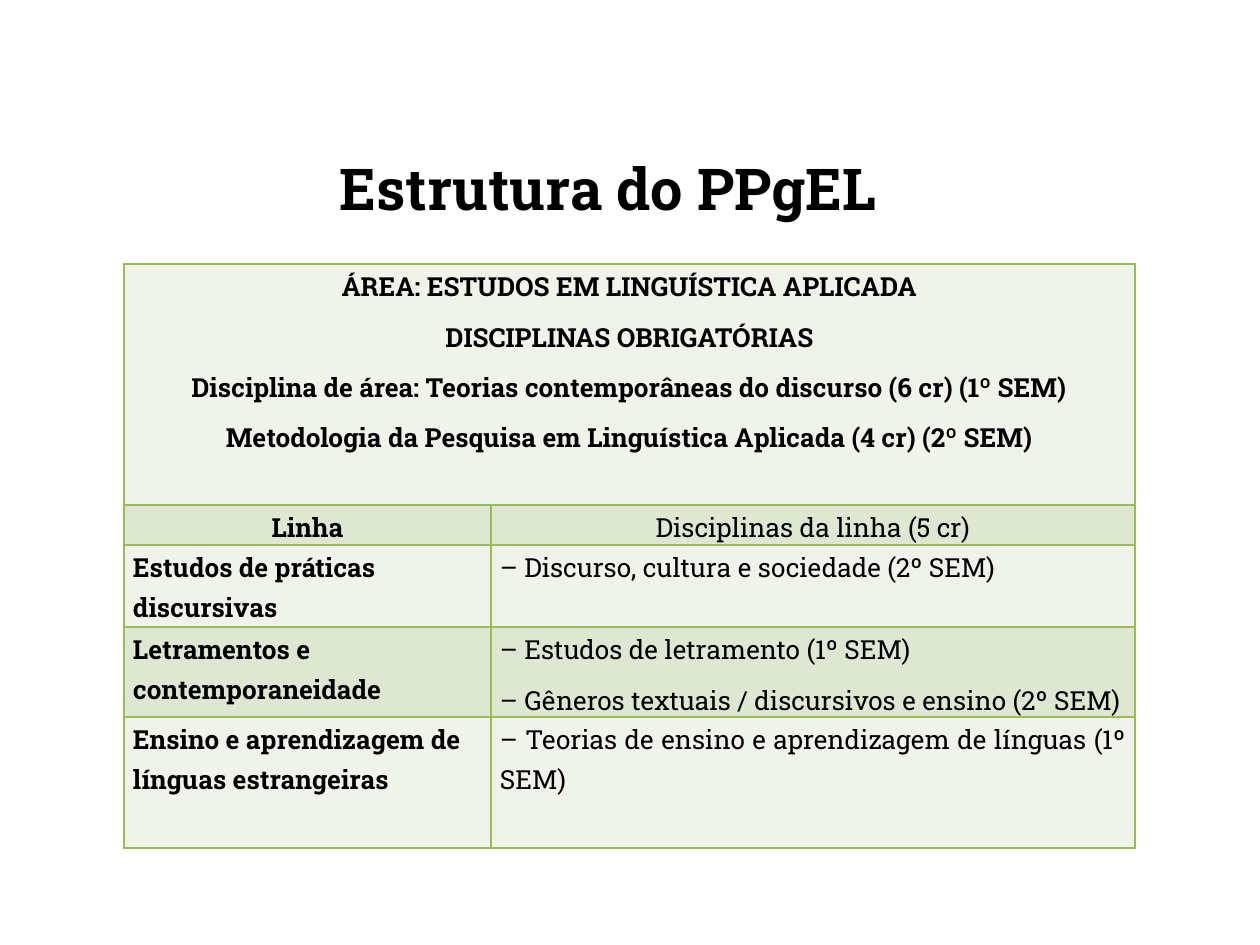
from lxml import etree
from pptx import Presentation
from pptx import util as u
from pptx.dml.color import RGBColor
from pptx.enum import text
from pptx.oxml.ns import qn

PX = 914400 / 126
FONT = "Roboto Slab"
COLORS = {"ink": "000000", "light": "EFF3EA", "dark": "DEE7D1", "border": "9BBB59"}
ALIGN = {"l": text.PP_ALIGN.LEFT, "c": text.PP_ALIGN.CENTER, "j": text.PP_ALIGN.JUSTIFY}


def px(n):
    return u.Emu(round(n * PX))


def add_run(p, words, size, bold):
    r = p.add_run()
    r.text = words
    r.font.name = FONT
    r.font.size = u.Pt(size)
    r.font.bold = bold
    r.font.color.rgb = RGBColor.from_string(COLORS["ink"])


prs = Presentation()
prs.slide_width, prs.slide_height = px(1260), px(945)
s = prs.slides.add_slide(prs.slide_layouts[5])

# Title
title = s.shapes.title
title.left, title.top, title.width, title.height = px(104), px(141), px(1008), px(93)
tf = title.text_frame
tf.auto_size = text.MSO_AUTO_SIZE.NONE
tf.vertical_anchor = text.MSO_ANCHOR.MIDDLE
p = tf.paragraphs[0]
p.alignment = ALIGN["c"]
add_run(p, "Estrutura do PPgEL", 33, True)

# Table content: each cell is (alignment, bold, paragraphs)
rows = [
    [("c", True, ["ÁREA: ESTUDOS EM LINGUÍSTICA APLICADA",
                  "DISCIPLINAS OBRIGATÓRIAS",
                  "Disciplina de área: Teorias contemporâneas do discurso (6 cr) (1º SEM)",
                  "Metodologia da Pesquisa em Linguística Aplicada (4 cr) (2º SEM)"]),
     ("c", True, [])],
    [("c", True, ["Linha"]),
     ("c", False, ["Disciplinas da linha (5 cr)"])],
    [("l", True, ["Estudos de práticas discursivas"]),
     ("j", False, ["– Discurso, cultura e sociedade (2º SEM)"])],
    [("l", True, ["Letramentos e contemporaneidade"]),
     ("j", False, ["– Estudos de letramento (1º SEM)",
                   "– Gêneros textuais / discursivos e ensino (2º SEM)"])],
    [("l", True, ["Ensino e aprendizagem de línguas estrangeiras"]),
     ("j", False, ["– Teorias de ensino e aprendizagem de línguas (1º SEM)"])],
]
col_widths = [367, 644]
row_heights = [241, 40, 82, 90, 131]

# Table grid
table = s.shapes.add_table(len(rows), len(col_widths), px(124), px(264),
                           px(sum(col_widths)), px(sum(row_heights))).table
for col, width in zip(table.columns, col_widths):
    col.width = px(width)
for row, height in zip(table.rows, row_heights):
    row.height = px(height)
table.cell(0, 0).merge(table.cell(0, 1))

# Cell text, borders and banded fill
for i, row in enumerate(rows):
    for j, (align, bold, lines) in enumerate(row):
        cell = table.cell(i, j)
        cell.margin_left = cell.margin_right = px(9)
        cell.margin_top = cell.margin_bottom = 0
        tf = cell.text_frame
        for n, words in enumerate(lines):
            p = tf.add_paragraph() if n else tf.paragraphs[0]
            p.alignment = ALIGN[align]
            p.line_spacing = 1.15
            p.space_after = u.Pt(6)
            add_run(p, words, 15, bold)

        tcPr = cell._tc.get_or_add_tcPr()
        for side in ("lnL", "lnR", "lnT", "lnB"):
            ln = etree.SubElement(tcPr, qn("a:" + side), w=str(u.Pt(1)))
            fill = etree.SubElement(ln, qn("a:solidFill"))
            etree.SubElement(fill, qn("a:srgbClr"), val=COLORS["border"])
        cell.fill.solid()
        cell.fill.fore_color.rgb = RGBColor.from_string(COLORS["dark" if i % 2 else "light"])

prs.save("out.pptx")
